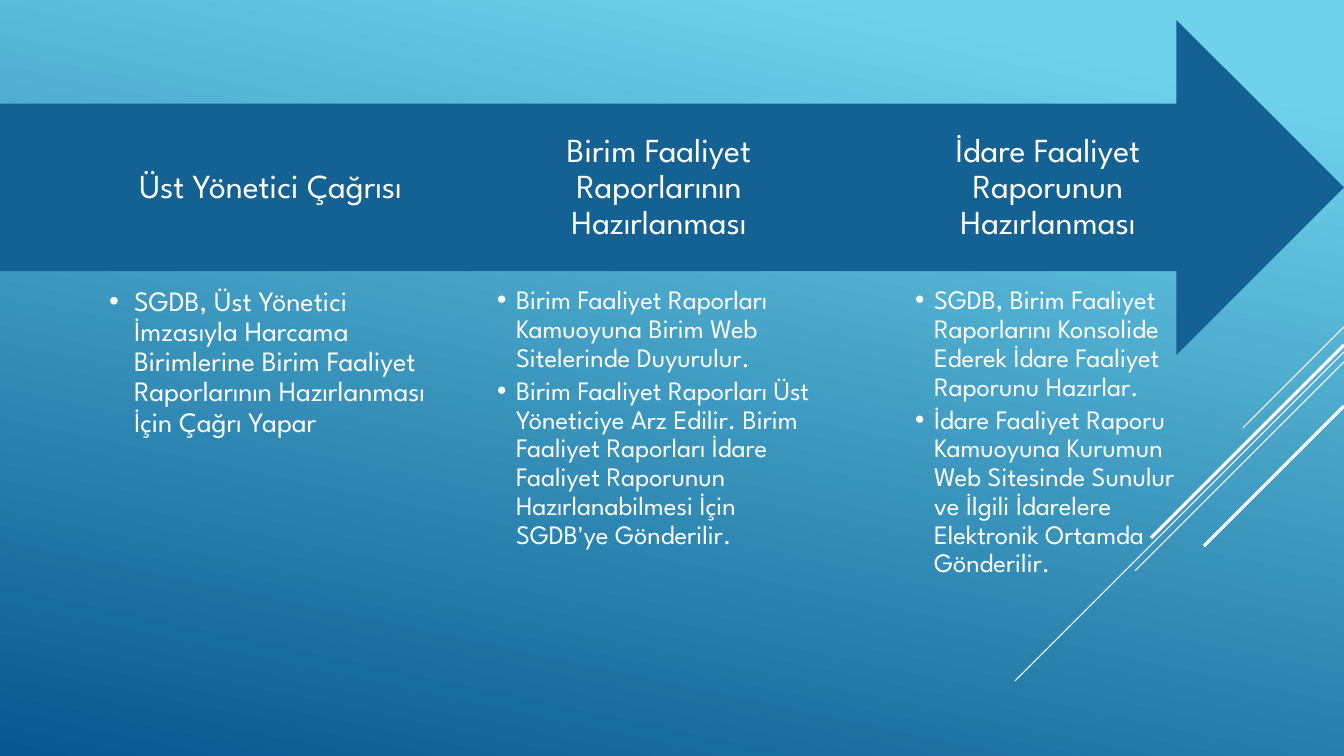
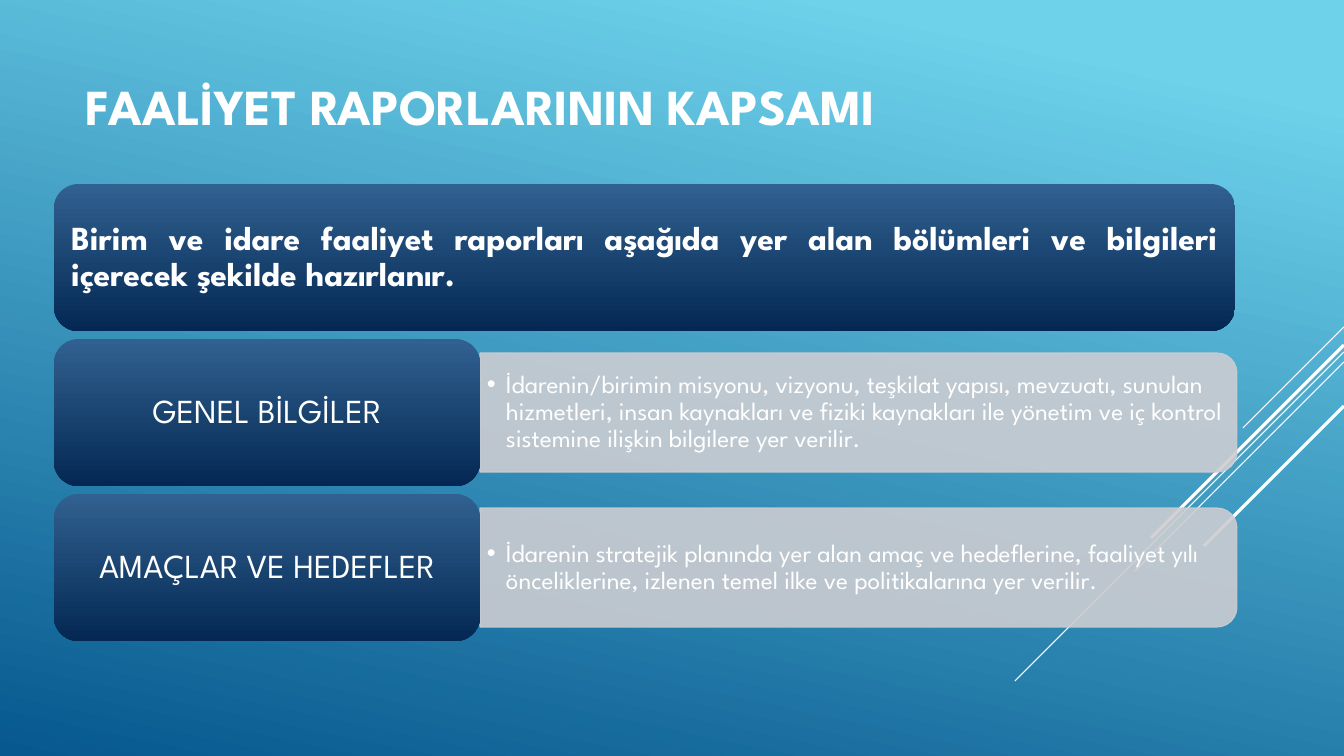
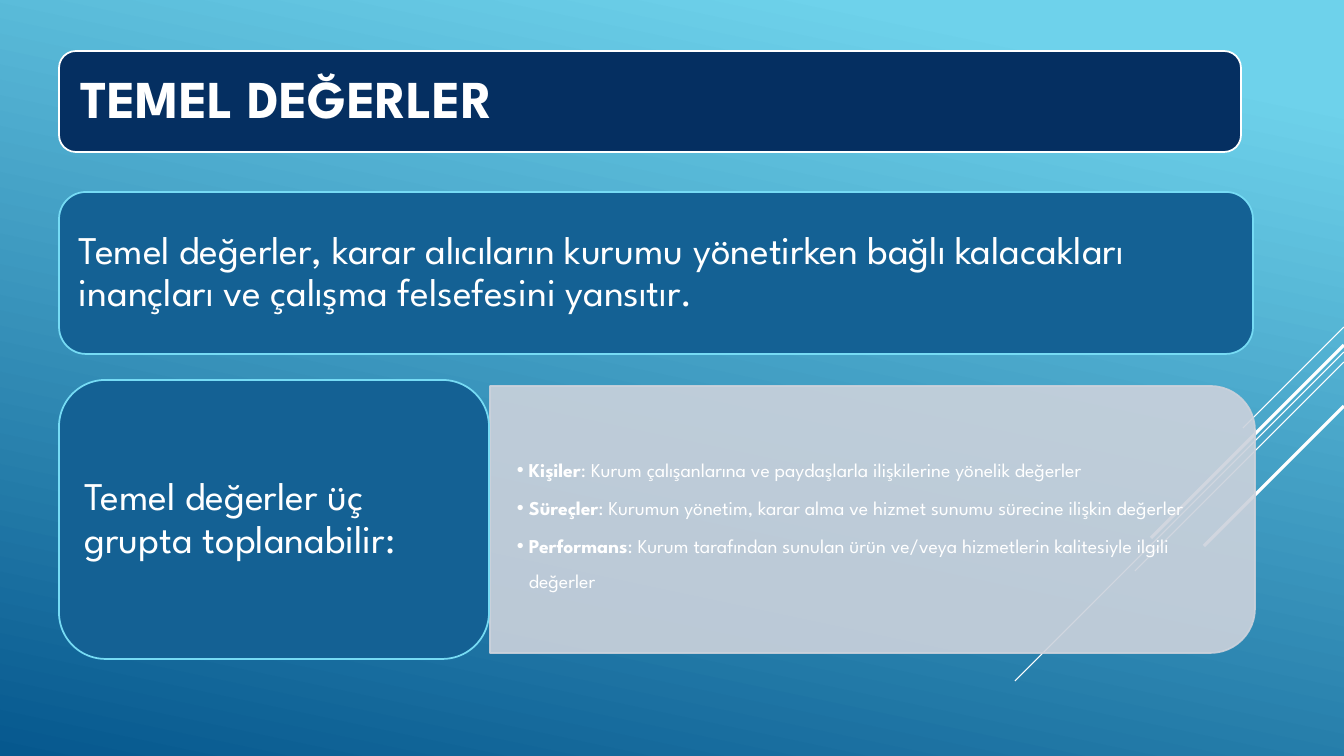
from pptx import Presentation
from pptx.dml.color import RGBColor
from pptx.enum.shapes import MSO_CONNECTOR, MSO_SHAPE
from pptx.enum.text import MSO_ANCHOR, MSO_AUTO_SIZE, PP_ALIGN
from pptx.oxml.ns import qn
from pptx.util import Pt
from lxml.etree import SubElement

FONT = "League Spartan"
WHITE = RGBColor(0xFF, 0xFF, 0xFF)
SKY = RGBColor(0x6E, 0xD2, 0xEB)
OCEAN = RGBColor(0x06, 0x58, 0x8E)
BLUE = RGBColor(0x14, 0x61, 0x94)
AQUA = RGBColor(0x76, 0xDB, 0xF4)
NAVY = RGBColor(0x05, 0x2F, 0x61)
CARD_TOP = RGBColor(0x31, 0x61, 0x90)
CARD_BOTTOM = RGBColor(0x04, 0x28, 0x53)
GREY = RGBColor(0xCC, 0xCD, 0xD2)
BLUE_GREY = RGBColor(0xCC, 0xD2, 0xDC)

WIDTH, HEIGHT = 1344, 756
COMPARISON, TWO_CONTENT, TITLE_CONTENT = 4, 3, 1

# Diagonals from the right edge: start y, horizontal reach, weight in points
RAYS = [(327, 101, 0.75), (352, 329, 0.75), (362, 209, 0.75), (345, 193, 2.25), (406, 140, 2.25)]

# Heading, its x and width, list x and width, text size, indent, items
STEPS = [
    ("Üst Yönetici Çağrısı", 133, 275, 109, 324, 20, 25, [
        "SGDB, Üst Yönetici İmzasıyla Harcama Birimlerine Birim Faaliyet Raporlarının "
        "Hazırlanması İçin Çağrı Yapar"]),
    ("Birim Faaliyet Raporlarının Hazırlanması", 497, 324, 497, 324, 19, 19, [
        "Birim Faaliyet Raporları Kamuoyuna Birim Web Sitelerinde Duyurulur.",
        "Birim Faaliyet Raporları Üst Yöneticiye Arz Edilir. Birim Faaliyet Raporları "
        "İdare Faaliyet Raporunun Hazırlanabilmesi İçin SGDB'ye Gönderilir."]),
    ("İdare Faaliyet Raporunun Hazırlanması", 886, 324, 915, 265, 19, 19, [
        "SGDB, Birim Faaliyet Raporlarını Konsolide Ederek İdare Faaliyet Raporunu Hazırlar.",
        "İdare Faaliyet Raporu Kamuoyuna Kurumun Web Sitesinde Sunulur ve İlgili İdarelere "
        "Elektronik Ortamda Gönderilir."]),
]

SCOPE_TITLE = "FAALİYET RAPORLARININ KAPSAMI"
SCOPE_INTRO = ("Birim ve idare faaliyet raporları aşağıda yer alan bölümleri ve bilgileri "
               "içerecek şekilde hazırlanır.")
SECTIONS = [
    ("GENEL BİLGİLER",
     "İdarenin/birimin misyonu, vizyonu, teşkilat yapısı, mevzuatı, sunulan hizmetleri, insan "
     "kaynakları ve fiziki kaynakları ile yönetim ve iç kontrol sistemine ilişkin bilgilere "
     "yer verilir."),
    ("AMAÇLAR VE HEDEFLER",
     "İdarenin stratejik planında yer alan amaç ve hedeflerine, faaliyet yılı önceliklerine, "
     "izlenen temel ilke ve politikalarına yer verilir."),
]

VALUES_TITLE = "TEMEL DEĞERLER"
VALUES_INTRO = ("Temel değerler, karar alıcıların kurumu yönetirken bağlı kalacakları "
                "inançları ve çalışma felsefesini yansıtır.")
VALUES_LEAD = "Temel değerler üç grupta toplanabilir:"
VALUES = [
    ("Kişiler", ": Kurum çalışanlarına ve paydaşlarla ilişkilerine yönelik değerler"),
    ("Süreçler", ": Kurumun yönetim, karar alma ve hizmet sunumu sürecine ilişkin değerler"),
    ("Performans", ": Kurum tarafından sunulan ürün ve/veya hizmetlerin kalitesiyle ilgili değerler"),
]


def px(n):
    return round(n * 12192000 / WIDTH)


def place(sp, x, y, w, h):
    sp.left, sp.top, sp.width, sp.height = px(x), px(y), px(w), px(h)


def set_gradient(fill, stops, angle):
    """Angle is clockwise, in degrees."""
    fill.gradient()
    fill.gradient_angle = 360 - angle
    for stop, (position, color) in zip(fill.gradient_stops, stops):
        stop.position, stop.color.rgb = position, color


def set_frame(sp, inset, anchor=MSO_ANCHOR.MIDDLE):
    tf = sp.text_frame
    tf.word_wrap, tf.auto_size, tf.vertical_anchor = True, MSO_AUTO_SIZE.NONE, anchor
    tf.margin_left = tf.margin_right = px(inset[0])
    tf.margin_top = tf.margin_bottom = px(inset[1])
    return tf


def format_paragraph(p, size, bold=False, align=PP_ALIGN.LEFT, spacing=0.9, after=0):
    p.alignment, p.line_spacing = align, spacing
    p.space_before, p.space_after = Pt(0), Pt(after)
    for r in p.runs:
        r.font.name, r.font.size, r.font.color.rgb = FONT, Pt(size), WHITE
        r.font.bold = bold


def write(sp, text, size, inset=(10, 5), **style):
    tf = set_frame(sp, inset)
    tf.text = text
    format_paragraph(tf.paragraphs[0], size, **style)


def write_list(s, ph, box, items, size, indent, inset, anchor=MSO_ANCHOR.MIDDLE, spacing=0.9):
    """Fill a body placeholder; an item given as a tuple starts with a bold run."""
    s.shapes.element.append(ph.element)  # in front of the shapes drawn so far
    place(ph, *box)
    tf = set_frame(ph, inset, anchor)
    for i, item in enumerate(items):
        p = tf.add_paragraph() if i else tf.paragraphs[0]
        parts = item if isinstance(item, tuple) else (item,)
        for part in parts:
            p.add_run().text = part
        format_paragraph(p, size, spacing=spacing, after=round(size * 0.15))
        p.runs[0].font.bold = len(parts) > 1
        pPr = p._p.get_or_add_pPr()
        pPr.set("marL", str(px(indent)))
        pPr.set("indent", str(-px(indent)))
        SubElement(pPr, qn("a:buFont"), typeface="Arial")
        SubElement(pPr, qn("a:buChar"), char="•")


def write_title(s, text, box, size, inset=(10, 5)):
    title = s.shapes.title
    s.shapes.element.append(title.element)
    place(title, *box)
    write(title, text, size, inset, bold=True)


def add_shape(s, kind, box, fill=None, line=None):
    sp = s.shapes.add_shape(kind, *map(px, box))
    sp.shadow.inherit = False
    if fill is None:
        set_gradient(sp.fill, [(0, CARD_TOP), (1, CARD_BOTTOM)], 90)
    else:
        sp.fill.solid()
        sp.fill.fore_color.rgb = fill
    if line is None:
        sp.line.fill.background()
    else:
        sp.line.color.rgb, sp.line.width = line, Pt(1.25)
    return sp


def add_panel(s, box, color, weight):
    """Translucent panel rounded on its right side only."""
    x, y, w, h = box
    upright = (x + (w - h) / 2, y + (h - w) / 2, h, w)
    sp = add_shape(s, MSO_SHAPE.ROUND_2_SAME_RECTANGLE, upright, color, color)
    sp.rotation, sp.line.width = 90, Pt(weight)
    for clr in sp.element.spPr.iter(qn("a:srgbClr")):
        SubElement(clr, qn("a:alpha"), val="90000")


def add_slide(prs, layout):
    s = prs.slides.add_slide(prs.slide_layouts[layout])
    return s, [ph for ph in s.placeholders if ph.placeholder_format.idx > 0]


def remove(sp):
    sp.element.getparent().remove(sp.element)


def decorate_master(prs, s):
    master = prs.slide_master
    set_gradient(master.background.fill, [(0.1, SKY), (1, OCEAN)], 102)
    for i, (y, reach, weight) in enumerate(RAYS):
        ray = s.shapes.add_connector(
            MSO_CONNECTOR.STRAIGHT, px(WIDTH), px(y), px(WIDTH - reach), px(y + reach))
        ray.line.color.rgb, ray.line.width = WHITE, Pt(weight)
        SubElement(ray.element.spPr, qn("a:effectLst"))
        ray.element.nvCxnSpPr.cNvPr.set("id", str(100 + i))
        master.shapes.element.append(ray.element)


def build_steps(prs):
    s, bodies = add_slide(prs, COMPARISON)
    decorate_master(prs, s)
    add_shape(s, MSO_SHAPE.RIGHT_ARROW, (0, 20, WIDTH, 335), BLUE)
    for ph, (heading, hx, hw, x, w, size, indent, items) in zip(bodies, STEPS):
        tb = s.shapes.add_textbox(*map(px, (hx, 104, hw, 167)))
        write(tb, heading, 24, (0, 27), align=PP_ALIGN.CENTER)
        write_list(s, ph, (x, 287, w, 420), items, size, indent, (0, 0), MSO_ANCHOR.TOP)
    for unused in [s.shapes.title, *bodies[len(STEPS):]]:
        remove(unused)


def build_scope(prs):
    s, bodies = add_slide(prs, TWO_CONTENT)
    left, top, pitch, height = 54, 184, 155, 147
    write_title(s, SCOPE_TITLE, (76, 26, 940, 166), 36)
    intro = add_shape(s, MSO_SHAPE.ROUNDED_RECTANGLE, (left, top, 1181, height))
    write(intro, SCOPE_INTRO, 24, bold=True, align=PP_ALIGN.JUSTIFY)
    for i, (ph, (heading, text)) in enumerate(zip(bodies, SECTIONS), 1):
        y = top + i * pitch
        add_panel(s, (480, y + 14, 757, 119), GREY, 0.75)
        write_list(s, ph, (480, y + 20, 751, 107), [text], 18, 19, (7, 4))
        card = add_shape(s, MSO_SHAPE.ROUNDED_RECTANGLE, (left, y, 426, height))
        write(card, heading, 24, align=PP_ALIGN.CENTER)


def build_values(prs):
    s, bodies = add_slide(prs, TITLE_CONTENT)
    left = 59
    add_shape(s, MSO_SHAPE.ROUNDED_RECTANGLE, (left, 51, 1182, 101), NAVY, WHITE)
    write_title(s, VALUES_TITLE, (left + 5, 56, 1172, 91), 38, (16, 16))
    add_panel(s, (490, 386, 765, 267), BLUE_GREY, 1.25)
    write_list(s, bodies[0], (490, 399, 752, 241), VALUES, 14, 12, (27, 14), spacing=1.5)
    for text, y, w, h in [(VALUES_INTRO, 192, 1194, 162), (VALUES_LEAD, 380, 430, 279)]:
        box = add_shape(s, MSO_SHAPE.ROUNDED_RECTANGLE, (left, y, w, h), BLUE, AQUA)
        write(box, text, 28, (12, 6))


def main():
    prs = Presentation()
    prs.slide_width, prs.slide_height = px(WIDTH), px(HEIGHT)
    build_steps(prs)
    build_scope(prs)
    build_values(prs)
    prs.save("out.pptx")


if __name__ == "__main__":
    main()
